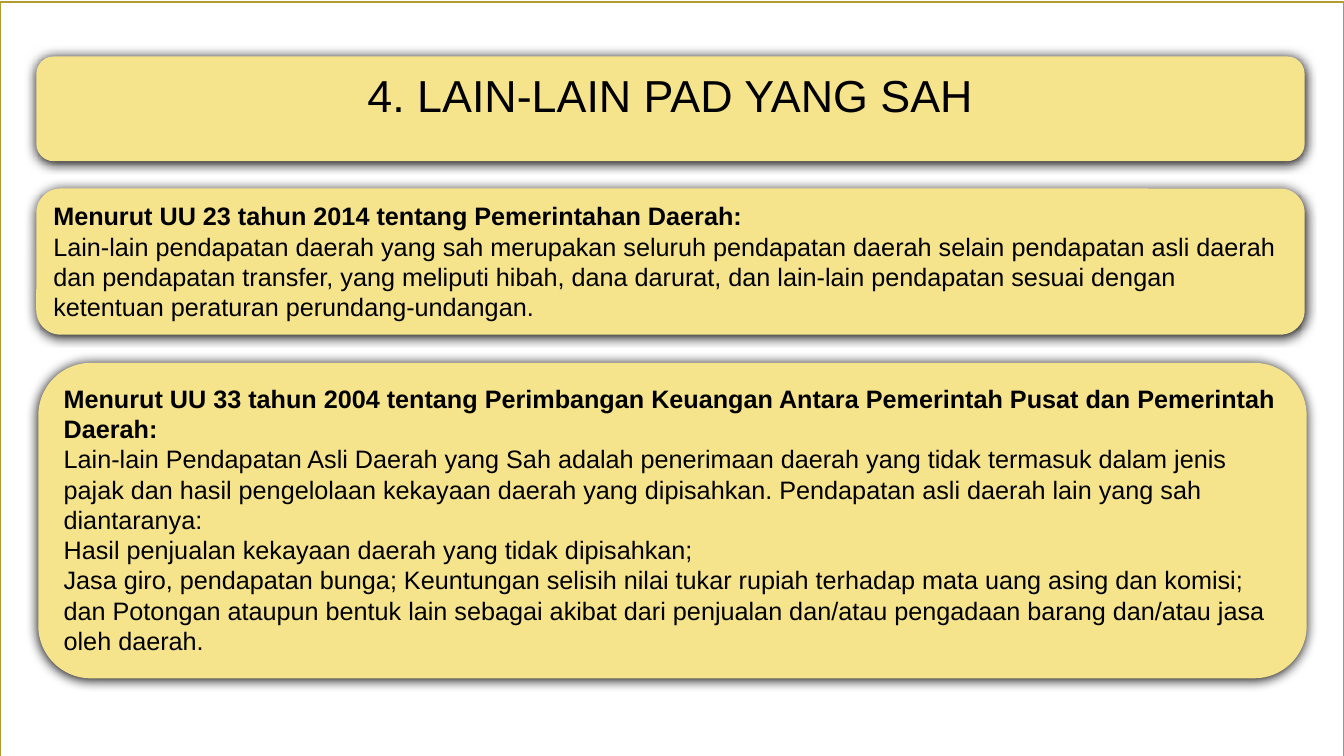
from lxml import etree
from pptx import Presentation
from pptx.dml.color import RGBColor
from pptx.enum.shapes import MSO_SHAPE
from pptx.enum.text import MSO_ANCHOR, PP_ALIGN
from pptx.oxml.ns import qn
from pptx.util import Inches, Pt

RECT = MSO_SHAPE.RECTANGLE
ROUNDED = MSO_SHAPE.ROUNDED_RECTANGLE
TOP = MSO_ANCHOR.TOP
LEFT, CENTER = PP_ALIGN.LEFT, PP_ALIGN.CENTER

WHITE = RGBColor(0xFF, 0xFF, 0xFF)
BLACK = RGBColor(0x00, 0x00, 0x00)
GOLD = RGBColor(0xB2, 0x9B, 0x2F)
YELLOW = RGBColor(0xF6, 0xE4, 0x8C)
FONT = "Arial"
CARD_WIDTH = 12.58

LAW_2014 = [
    "Menurut UU 23 tahun 2014 tentang Pemerintahan Daerah:",
    "Lain-lain pendapatan daerah yang sah merupakan seluruh pendapatan daerah "
    "selain pendapatan asli daerah dan pendapatan transfer, yang meliputi hibah, "
    "dana darurat, dan lain-lain pendapatan sesuai dengan ketentuan peraturan "
    "perundang-undangan.",
]
LAW_2004 = [
    "Menurut UU 33 tahun 2004 tentang Perimbangan Keuangan Antara Pemerintah "
    "Pusat dan Pemerintah Daerah:",
    "Lain-lain Pendapatan Asli Daerah yang Sah adalah penerimaan daerah yang "
    "tidak termasuk dalam jenis pajak dan hasil pengelolaan kekayaan daerah yang "
    "dipisahkan. Pendapatan asli daerah lain yang sah diantaranya:",
    "Hasil penjualan kekayaan daerah yang tidak dipisahkan;",
    "Jasa giro, pendapatan bunga; Keuntungan selisih nilai tukar rupiah terhadap "
    "mata uang asing dan komisi; dan Potongan ataupun bentuk lain sebagai akibat "
    "dari penjualan dan/atau pengadaan barang dan/atau jasa oleh daerah.",
]


def add_run(p, text, size, bold=False):
    r = p.add_run()
    r.text = text
    r.font.name = FONT
    r.font.size = Pt(size)
    r.font.bold = bold
    r.font.color.rgb = BLACK


def add_shadow(sp):
    """Give the shape a soft black shadow just below it."""
    sp.shadow.inherit = False
    effects = sp.element.spPr.find(qn("a:effectLst"))
    shadow = etree.SubElement(
        effects, qn("a:outerShdw"), blurRad=str(Pt(8.5)), dist=str(Pt(1)),
        dir=str(90 * 60000), algn="ctr", rotWithShape="0")
    etree.SubElement(shadow, qn("a:srgbClr"), val=str(BLACK))


def add_frame(slide):
    sp = slide.shapes.add_shape(
        RECT, 0, Inches(0.02), Inches(13.33), Inches(7.5))
    sp.shadow.inherit = False
    sp.fill.solid()
    sp.fill.fore_color.rgb = WHITE
    sp.line.color.rgb = GOLD
    sp.line.width = Pt(1)


def add_card(slide, left, top, height):
    sp = slide.shapes.add_shape(
        ROUNDED, Inches(left), Inches(top), Inches(CARD_WIDTH), Inches(height))
    sp.fill.solid()
    sp.fill.fore_color.rgb = YELLOW
    sp.line.fill.background()
    add_shadow(sp)
    return sp


def add_law_card(slide, left, top, height, paragraphs):
    """Add a card whose first paragraph is a bold heading."""
    tf = add_card(slide, left, top, height).text_frame
    tf.word_wrap = True
    tf.vertical_anchor = TOP
    for i, text in enumerate(paragraphs):
        p = tf.add_paragraph() if i else tf.paragraphs[0]
        p.alignment = LEFT
        add_run(p, text, 18, bold=(i == 0))


def add_title(slide, text):
    add_card(slide, 0.36, 0.56, 1.04)
    title = slide.shapes.title
    title.left, title.top = Inches(0.36), Inches(0.62)
    title.width, title.height = Inches(CARD_WIDTH), Inches(0.9)
    tf = title.text_frame
    tf.word_wrap = True
    tf.vertical_anchor = TOP
    p = tf.paragraphs[0]
    p.alignment = CENTER
    add_run(p, text, 32)
    # Bring the title in front of its card
    title.element.getparent().append(title.element)


def main():
    prs = Presentation()
    prs.slide_width, prs.slide_height = Inches(13.33), Inches(7.5)
    slide = prs.slides.add_slide(prs.slide_layouts[5])
    add_frame(slide)
    add_title(slide, "4. LAIN-LAIN PAD YANG SAH")
    add_law_card(slide, 0.36, 1.87, 1.45, LAW_2014)
    add_law_card(slide, 0.38, 3.6, 3.13, LAW_2004)
    prs.save("out.pptx")


if __name__ == "__main__":
    main()
